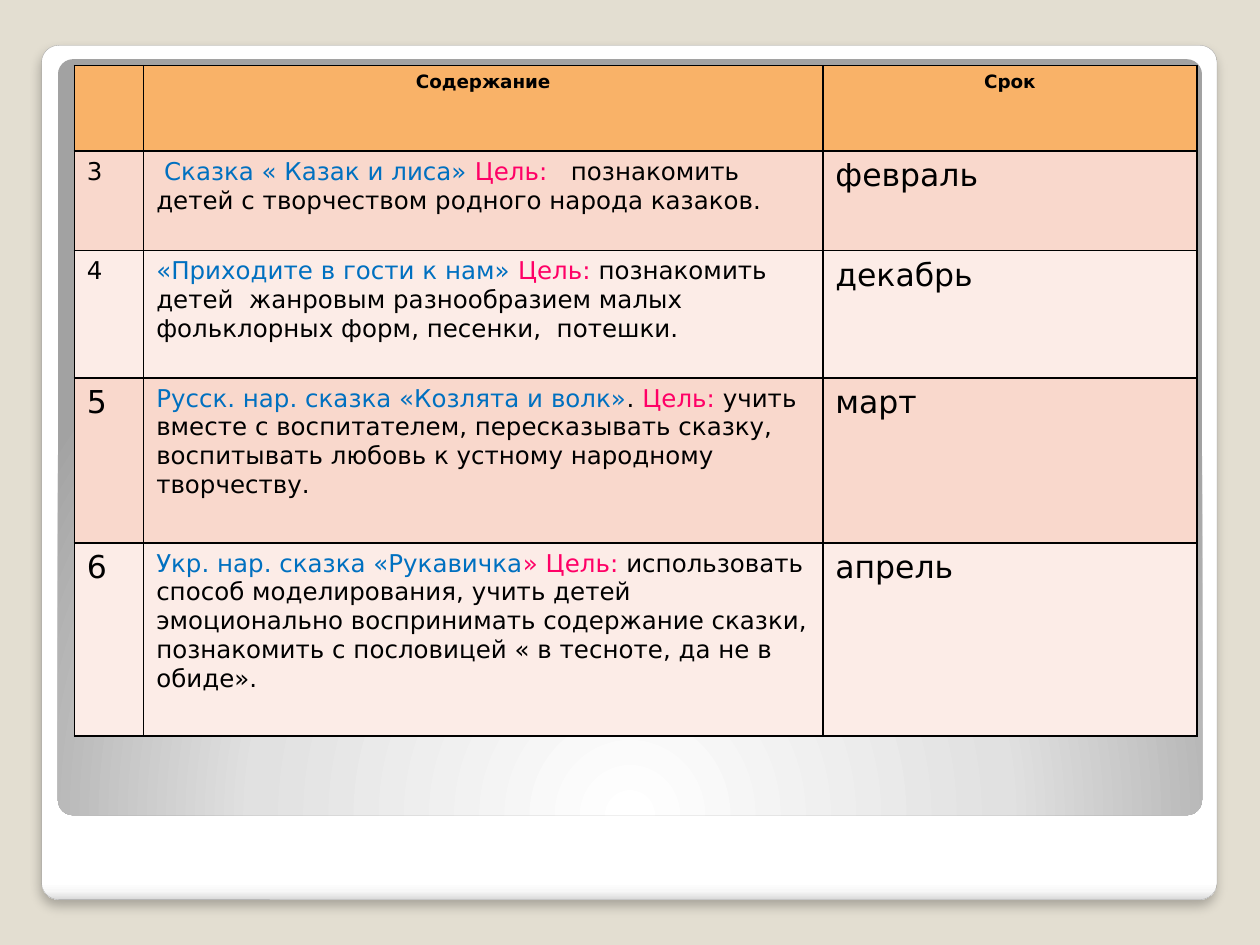
import pptx
import pptx.dml.color
import pptx.enum.shapes
import pptx.enum.text
import pptx.oxml
import pptx.oxml.ns
import pptx.util

Inches = pptx.util.Inches
Pt = pptx.util.Pt
qn = pptx.oxml.ns.qn
NS = pptx.oxml.ns.nsdecls("a")

BLACK, BLUE, PINK = "000000", "0070C0", "FF0066"
HEADER_FILL, ODD_FILL, EVEN_FILL = "F9B268", "F9D8CC", "FCECE7"


def rgb(value):
    return pptx.dml.color.RGBColor.from_string(value)


class SlideBuilder:
    font = "DejaVu Sans"

    def __init__(self, slide):
        self.slide = slide

    def background(self, color):
        fill = self.slide.background.fill
        fill.solid()
        fill.fore_color.rgb = rgb(color)

    def panel(self, left, top, width, height, stops, direction):
        """Rounded panel with a gradient; direction is its XML element."""
        panel = self.slide.shapes.add_shape(
            pptx.enum.shapes.MSO_SHAPE.ROUNDED_RECTANGLE,
            Inches(left), Inches(top), Inches(width), Inches(height))
        panel.adjustments[0] = 0.02
        panel.shadow.inherit = False
        panel.line.fill.background()
        panel.fill.gradient()
        stop_xml = "".join(
            f'<a:gs pos="{pos * 1000}"><a:srgbClr val="{color}"/></a:gs>'
            for pos, color in stops)
        properties = panel.fill._xPr
        properties.replace(
            properties.find(qn("a:gradFill")),
            pptx.oxml.parse_xml(
                f'<a:gradFill {NS} rotWithShape="1"><a:gsLst>{stop_xml}</a:gsLst>'
                f'{direction}</a:gradFill>'))
        return panel

    def outline(self, panel, color, width):
        panel.line.color.rgb = rgb(color)
        panel.line.width = Pt(width)

    def drop_shadow(self, panel, color, alpha, blur, distance):
        effects = panel.fill._xPr.find(qn("a:effectLst"))
        effects.append(pptx.oxml.parse_xml(
            f'<a:outerShdw {NS} blurRad="{Pt(blur)}" dist="{Pt(distance)}" '
            f'dir="5400000" rotWithShape="0"><a:srgbClr val="{color}">'
            f'<a:alpha val="{alpha * 1000}"/></a:srgbClr></a:outerShdw>'))

    def table(self, left, top, widths, heights):
        table = self.slide.shapes.add_table(
            len(heights), len(widths), Inches(left), Inches(top),
            Inches(sum(widths)), Inches(sum(heights))).table
        table.first_row = table.horz_banding = False
        for column, width in zip(table.columns, widths):
            column.width = Inches(width)
        for row, height in zip(table.rows, heights):
            row.height = Inches(height)
        return table

    def cell(self, cell, runs, size, fill, header=False):
        """Runs are (text, colour) pairs."""
        properties = cell._tc.get_or_add_tcPr()
        for side in ("lnL", "lnR", "lnT", "lnB"):
            properties.append(pptx.oxml.parse_xml(
                f'<a:{side} {NS} w="{Pt(1)}"><a:solidFill>'
                f'<a:srgbClr val="{BLACK}"/></a:solidFill></a:{side}>'))
        cell.fill.solid()
        cell.fill.fore_color.rgb = rgb(fill)
        paragraph = cell.text_frame.paragraphs[0]
        paragraph.font.name = self.font
        paragraph.font.size = Pt(size)
        paragraph.font.bold = header
        if header:
            paragraph.alignment = pptx.enum.text.PP_ALIGN.CENTER
        for text, color in runs:
            run = paragraph.add_run()
            run.text = text
            run.font.name = self.font
            run.font.size = Pt(size)
            run.font.bold = header
            run.font.color.rgb = rgb(color)


# Number, number size, content runs, month
LESSONS = [
    ("3", 14, [(" ", BLACK), ("Сказка « Казак и лиса» ", BLUE), ("Цель:   ", PINK),
               ("познакомить детей с творчеством родного народа казаков.", BLACK)],
     "февраль"),
    ("4", 14, [("«Приходите в гости к нам» ", BLUE), ("Цель: ", PINK),
               ("познакомить детей  жанровым разнообразием малых фольклорных форм, "
                "песенки,  потешки.", BLACK)],
     "декабрь"),
    ("5", 18, [("Русск. нар. сказка «Козлята и волк»", BLUE), (". ", BLACK),
               ("Цель: ", PINK),
               ("учить вместе с воспитателем, пересказывать сказку, воспитывать "
                "любовь к устному народному творчеству.", BLACK)],
     "март"),
    ("6", 18, [("Укр. нар. сказка «Рукавичка", BLUE), ("» Цель: ", PINK),
               ("использовать способ моделирования, учить детей  эмоционально "
                "воспринимать содержание сказки, познакомить с пословицей "
                "« в тесноте, да не в обиде».", BLACK)],
     "апрель"),
]


def main():
    deck = pptx.Presentation()
    deck.slide_width, deck.slide_height = Inches(10), Inches(7.5)
    builder = SlideBuilder(deck.slides.add_slide(deck.slide_layouts[6]))

    # Backdrop: white card and grey panel
    builder.background("E3DED1")
    card = builder.panel(
        0.33, 0.36, 9.33, 6.78,
        [(0, "FFFFFF"), (98, "FFFFFF"), (99, "F7F7F7"), (100, "DADADA")],
        '<a:lin ang="5400000" scaled="0"/>')
    builder.outline(card, "A4A4A4", 0.16)
    builder.drop_shadow(card, BLACK, alpha=25, blur=6, distance=4)
    builder.panel(
        0.46, 0.47, 9.08, 6,
        [(0, "FFFFFF"), (55, "E1E1E1"), (100, "A2A2A2")],
        '<a:path path="circle"><a:fillToRect l="50000" t="175000" '
        'r="50000" b="-75000"/></a:path>')

    # Lesson plan: header row, then one row per lesson
    plan = builder.table(0.59, 0.52, [0.55, 5.39, 2.97],
                         [0.68, 0.79, 1.01, 1.31, 1.53])
    for column, title in enumerate(["", "Содержание", "Срок"]):
        runs = [(title, BLACK)] if title else []
        builder.cell(plan.cell(0, column), runs, 10.5, HEADER_FILL, header=True)
    for row, (number, number_size, content, month) in enumerate(LESSONS, start=1):
        fill = ODD_FILL if row % 2 else EVEN_FILL
        builder.cell(plan.cell(row, 0), [(number, BLACK)], number_size, fill)
        builder.cell(plan.cell(row, 1), content, 14, fill)
        builder.cell(plan.cell(row, 2), [(month, BLACK)], 18, fill)

    deck.save("out.pptx")


if __name__ == "__main__":
    main()
